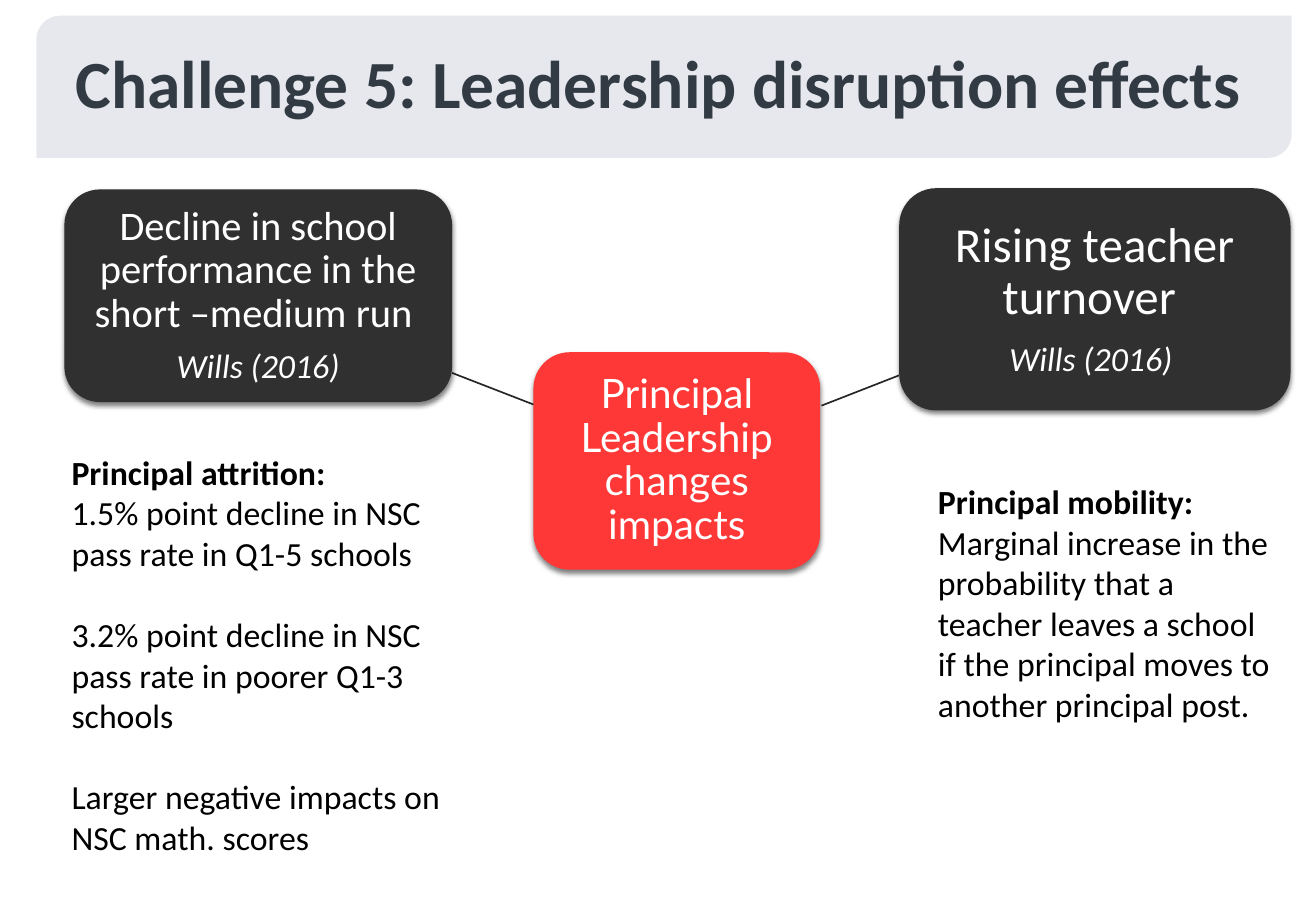
from lxml import etree
from pptx import Presentation
from pptx.dml.color import RGBColor
from pptx.enum.shapes import MSO_CONNECTOR as Link, MSO_SHAPE as Kind
from pptx.enum.text import MSO_ANCHOR as Anchor, MSO_AUTO_SIZE as Fit, PP_ALIGN as Align
from pptx.oxml import parse_xml
from pptx.oxml.ns import nsdecls, qn
from pptx.util import Inches, Pt

SHADE = (f'<a:outerShdw {nsdecls("a")} blurRad="38100" dist="25400" dir="5400000" '
         'algn="t" rotWithShape="0"><a:srgbClr val="000000">'
         '<a:alpha val="50000"/></a:srgbClr></a:outerShdw>')


def hue(code):
    return RGBColor.from_string(code)


def write(para, text, size=20, font="Calibri", color="000000", bold=False,
          italic=False, align=Align.LEFT, line=None, before=0, after=0):
    para.alignment = align
    para.line_spacing = line
    para.space_before, para.space_after = Pt(before), Pt(after)
    run = para.add_run()
    run.text = text
    face = run.font
    face.name, face.size, face.bold, face.italic = font, Pt(size), bold, italic
    face.color.rgb = hue(color)


class Deck:
    white, dark, red, ink = "FFFFFF", "303030", "FE3737", "323B44"
    band, wire = "E6E8EE", "262626"

    def __init__(self, wide, high):
        self.show = Presentation()
        self.show.slide_width, self.show.slide_height = Inches(wide), Inches(high)
        self.slide = self.show.slides.add_slide(self.show.slide_layouts[5])
        self.shapes = self.slide.shapes

    def shape(self, kind, box, fill):
        item = self.shapes.add_shape(kind, *map(Inches, box))
        item.fill.solid()
        item.fill.fore_color.rgb = hue(fill)
        item.line.fill.background()
        item.shadow.inherit = False
        return item

    def title(self, text, box):
        head = self.shapes.title
        head.left, head.top, head.width, head.height = map(Inches, box)
        frame = head.text_frame
        frame.vertical_anchor = Anchor.TOP
        write(frame.paragraphs[0], text, size=40, color=self.ink, bold=True,
              align=Align.CENTER)

    def banner(self, box):
        item = self.shape(Kind.ROUND_2_DIAG_RECTANGLE, box, self.band)
        # Send the band behind the title
        self.shapes.title._element.addprevious(item._element)

    def fill(self, frame, paras):
        frame.word_wrap = True
        for i, (text, form) in enumerate(paras):
            para = frame.add_paragraph() if i else frame.paragraphs[0]
            write(para, text, **form)

    def card(self, box, fill, *paras):
        item = self.shape(Kind.ROUNDED_RECTANGLE, box, fill)
        item._element.spPr.find(qn("a:effectLst")).append(parse_xml(SHADE))
        frame = item.text_frame
        frame.vertical_anchor = Anchor.MIDDLE
        frame.margin_left = frame.margin_right = Inches(0.07)
        frame.margin_top = frame.margin_bottom = Inches(0.07)
        base = dict(color=self.white, align=Align.CENTER, line=0.9)
        self.fill(frame, [(text, {**base, "after": round(form["size"] * 0.35), **form})
                          for text, form in paras])

    def note(self, box, *paras):
        frame = self.shapes.add_textbox(*map(Inches, box)).text_frame
        self.fill(frame, paras)
        frame.auto_size = Fit.SHAPE_TO_FIT_TEXT

    def link(self, *ends):
        item = self.shapes.add_connector(Link.STRAIGHT, *map(Inches, ends))
        item.line.color.rgb = hue(self.wire)
        item.line.width = Pt(1)
        etree.SubElement(item._element.spPr, qn("a:effectLst"))


def main():
    deck = Deck(10.83, 7.5)
    cite = dict(size=20, italic=True)
    bold, gap = dict(bold=True), dict(before=24)

    # Title on its band
    deck.title("Challenge 5: Leadership disruption effects", (0, 0.29, 10.83, 1.5))
    deck.banner((0.3, 0.13, 10.33, 1.17))

    # Centre card and its two effects
    deck.card((4.39, 2.9, 2.36, 1.79), deck.red,
              ("Principal Leadership changes impacts", dict(size=24, font="Lato")))
    deck.link(6.76, 3.34, 7.4, 3.09)
    deck.card((7.4, 1.55, 3.22, 1.83), deck.dark,
              ("Rising teacher turnover ", dict(size=29)), ("Wills (2016) ", cite))
    deck.link(4.39, 3.33, 3.72, 3.07)
    deck.card((0.53, 1.56, 3.19, 1.75), deck.dark,
              ("Decline in school performance in the short –medium run ", dict(size=24)),
              ("Wills (2016)", cite))

    # Findings under each effect
    deck.note((0.49, 3.67, 3.51, 3.47),
              ("Principal attrition:", bold),
              ("1.5% point decline in NSC pass rate in Q1-5 schools", {}),
              ("3.2% point decline in NSC pass rate in poorer Q1-3 schools", gap),
              ("Larger negative impacts on NSC math. scores", gap))
    deck.note((7.62, 3.91, 2.99, 2.12),
              ("Principal mobility:", bold),
              ("Marginal increase in the probability that a teacher leaves a school "
               "if the principal moves to another principal post.", {}))

    deck.show.save("out.pptx")


if __name__ == "__main__":
    main()
